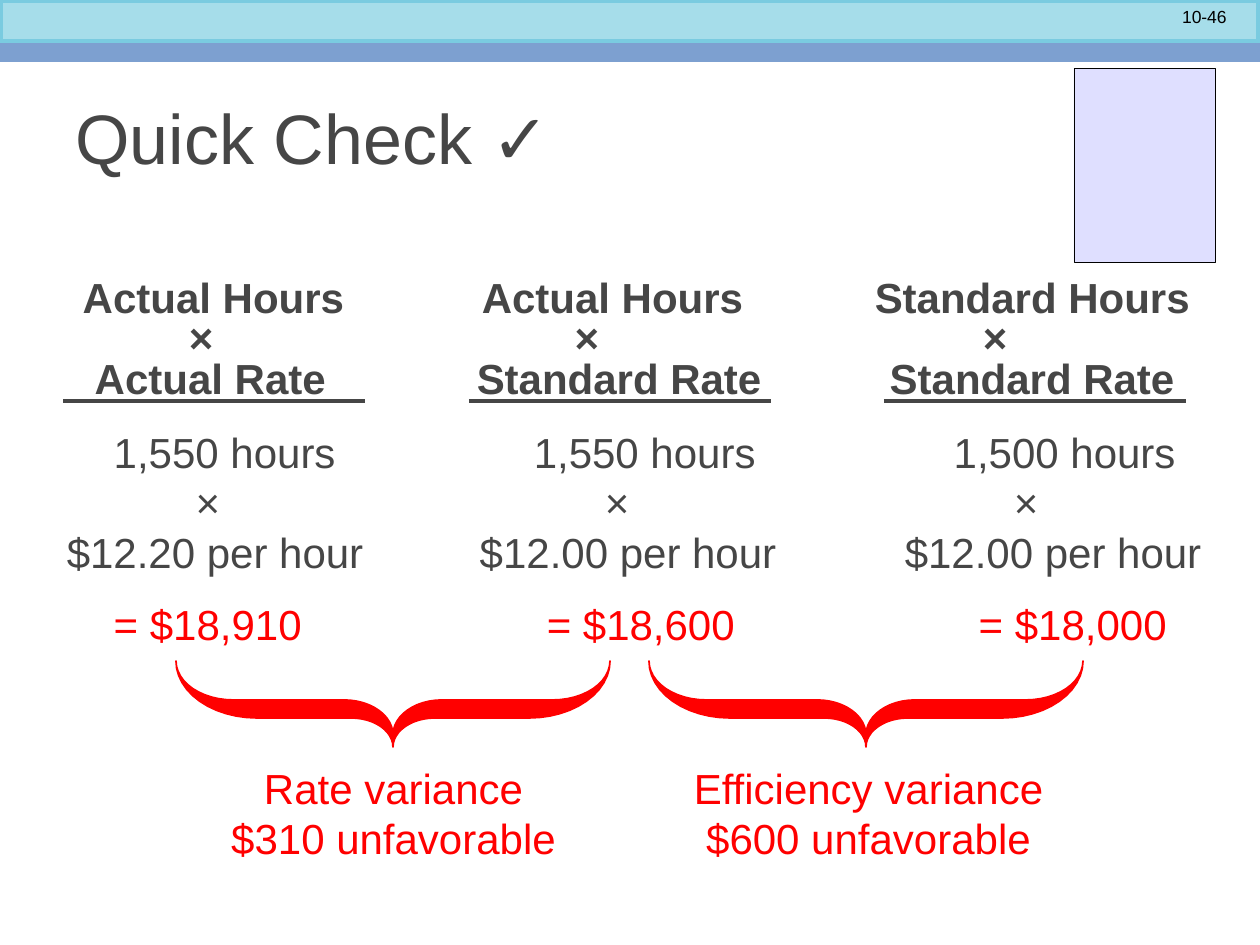
import math
from lxml import etree
from pptx import Presentation
from pptx import util as u
from pptx.dml.color import RGBColor
from pptx.enum import shapes as sh, text as tx
from pptx.oxml import ns

# Content: each row is (cells, left edge of each cell in px)
TITLE = "Quick Check ✓"
PAGE = "10-46"
FORMULAS = [
    (("Actual Hours", "Actual Hours", "Standard Hours"), (83, 482, 875)),
    (("×", "×", "×"), (189, 575, 983)),
    (("Actual Rate", "Standard Rate", "Standard Rate"), (95, 477, 890)),
]
AMOUNTS = [
    (("1,550 hours", "1,550 hours", "1,500 hours"), (114, 534, 954)),
    (("×", "×", "×"), (196, 605, 1014)),
    (("$12.20 per hour", "$12.00 per hour", "$12.00 per hour"), (67, 480, 905)),
]
TOTALS = (("= $18,910", "= $18,600", "= $18,000"), (114, 547, 979))
RULE_LEFTS = (63, 469, 884)
# (text, text left, brace left)
VARIANCES = [
    ("Rate variance\v$310 unfavorable", 126, 176),
    ("Efficiency variance\v$600 unfavorable", 601, 649),
]

THEME = {
    "font": "Arial", "title": 40, "body": 24, "page": 10,
    "ink": "464646", "black": "000000", "red": "FF0000",
    "band": "A6DDEA", "band_edge": "7ACBE0", "bar": "7DA0D0", "package": "DFDFFF",
}
PX = 914400 / 126
INSET = 12.6
FINE = 100  # outline units per px, for smooth curves


def px(n):
    return u.Emu(round(n * PX))


def color(name):
    return RGBColor.from_string(THEME[name])


def paint(shape, fill, line=None, width=0.0):
    shape.shadow.inherit = False
    shape.fill.solid()
    shape.fill.fore_color.rgb = color(fill)
    if line:
        shape.line.color.rgb = color(line)
        shape.line.width = u.Pt(width)
    else:
        shape.line.fill.background()


def add_rect(slide, box, *look):
    rect = slide.shapes.add_shape(sh.MSO_SHAPE.RECTANGLE, *map(px, box))
    paint(rect, *look)


def style(par, size, ink, bold=False, align=tx.PP_ALIGN.LEFT):
    par.alignment = align
    par.font.name = THEME["font"]
    par.font.size = u.Pt(THEME[size])
    par.font.bold = bold
    par.font.color.rgb = color(ink)


def add_text(slide, box, words, size, ink, align):
    frame = slide.shapes.add_textbox(*map(px, box)).text_frame
    frame.word_wrap = True
    frame.text = words
    style(frame.paragraphs[0], size, ink, align=align)


def add_columns(slide, box, rows, bold=False):
    """One paragraph per row; tab stops place its cells."""
    frame = slide.shapes.add_textbox(*map(px, box)).text_frame
    frame.word_wrap = True
    for i, (cells, lefts) in enumerate(rows):
        par = frame.paragraphs[0] if i == 0 else frame.add_paragraph()
        par.text = "".join("\t" + cell for cell in cells)
        style(par, "body", "red" if cells is TOTALS[0] else "ink", bold)
        tabs = etree.Element(ns.qn("a:tabLst"))
        for left in lefts:
            etree.SubElement(tabs, ns.qn("a:tab"), algn="l", pos=str(px(left - box[0] - INSET)))
        par.font._element.addprevious(tabs)
    return frame.paragraphs


def brace_edge(outer_w, outer_h, inner_w, tip, half=217, steps=12):
    """Two quarter ellipses from end to tip, then the same mirrored."""
    angles = [math.pi / 2 * i / steps for i in range(steps + 1)]
    outer = [(outer_w * (1 - math.cos(a)), outer_h * math.sin(a)) for a in angles]
    inner = [(half - inner_w * (1 - math.sin(a)), tip - (tip - outer_h) * math.cos(a))
             for a in angles]
    side = outer + inner
    return side + [(2 * half - x, y) for x, y in reversed(side)]


def add_brace(slide, left, top):
    upper = brace_edge(57, 39, 49, 74)
    lower = brace_edge(81, 57, 42, 86)
    points = [((left + x) * FINE, (top + y) * FINE) for x, y in upper + lower[::-1]]
    builder = slide.shapes.build_freeform(*points[0], scale=PX / FINE)
    builder.add_line_segments(points[1:], close=True)
    paint(builder.convert_to_shape(), "red", "red", 1)


def main():
    prs = Presentation()
    prs.slide_width, prs.slide_height = px(1260), px(945)
    slide = prs.slides.add_slide(prs.slide_layouts[5])

    # Top bands and page number
    add_rect(slide, (0, 0, 1260, 43), "band", "band_edge", 4)
    add_rect(slide, (0, 43, 1260, 19), "bar")
    add_text(slide, (1071, 0, 168, 34), PAGE, "page", "black", tx.PP_ALIGN.RIGHT)

    # Title
    title = slide.shapes.title
    title.left, title.top, title.width, title.height = map(px, (63, 63, 1134, 147))
    title.text_frame.text = TITLE
    title.text_frame.vertical_anchor = tx.MSO_ANCHOR.MIDDLE
    style(title.text_frame.paragraphs[0], "title", "ink")

    # Plain block for the product
    add_rect(slide, (1074, 68, 141, 194), "package", "black", 0.38)

    # Formulas with their rules
    for par in add_columns(slide, (37, 275, 1207, 135), FORMULAS, bold=True):
        par.line_spacing = 0.8
    for left in RULE_LEFTS:
        rule = slide.shapes.add_connector(
            sh.MSO_CONNECTOR.STRAIGHT, *map(px, (left, 401, left + 302, 401)))
        rule.line.color.rgb = color("ink")
        rule.line.width = u.Pt(2.25)
        etree.SubElement(rule._element.spPr, ns.qn("a:effectLst"))

    # Amounts and totals
    amounts = add_columns(slide, (32, 420, 1186, 241), AMOUNTS + [TOTALS])
    amounts[-1].space_before = u.Pt(12)

    # Variances
    for words, text_left, brace_left in VARIANCES:
        add_brace(slide, brace_left, 661)
        add_text(slide, (text_left, 756, 535, 115), words, "body", "red", tx.PP_ALIGN.CENTER)

    prs.save("out.pptx")


if __name__ == "__main__":
    main()
